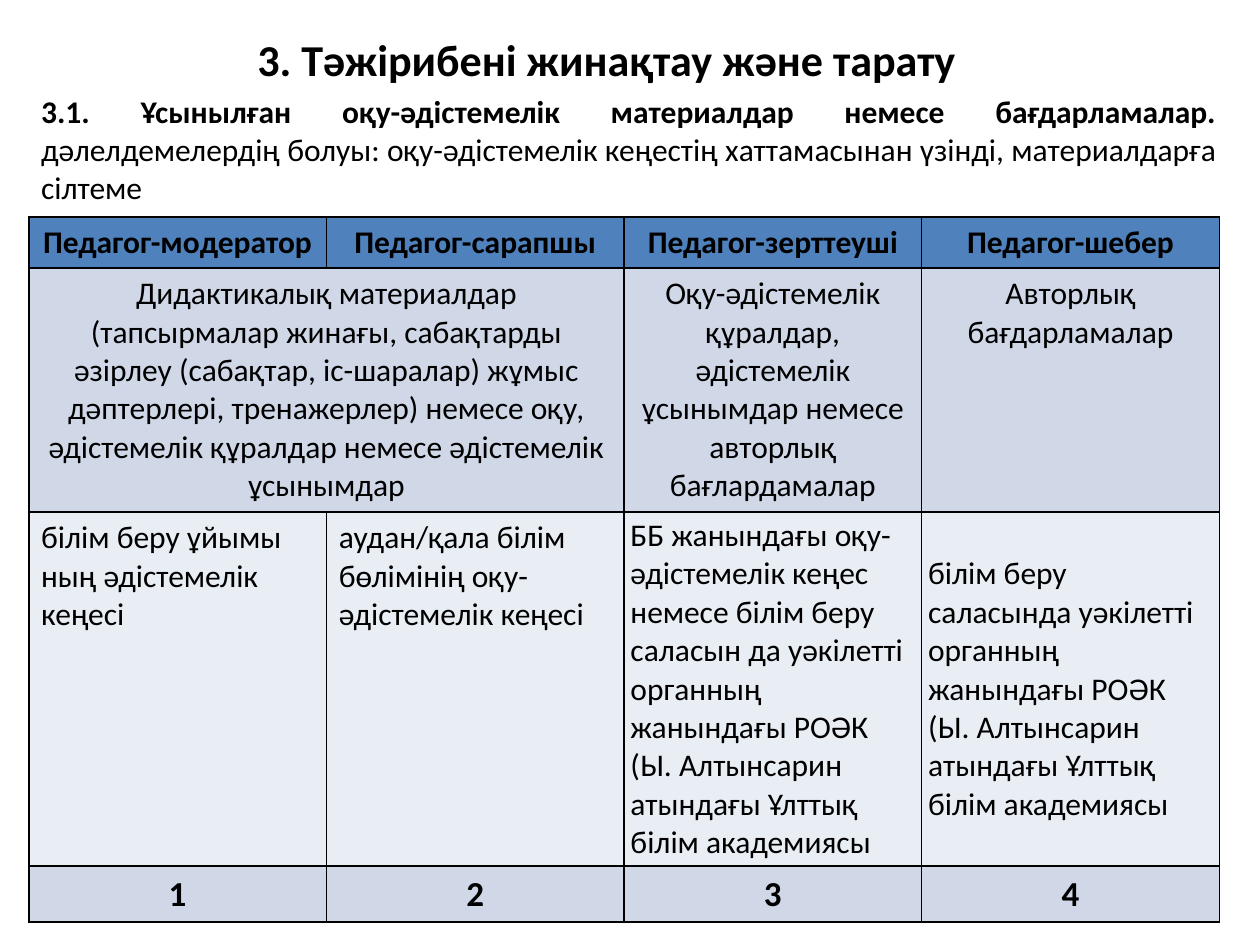
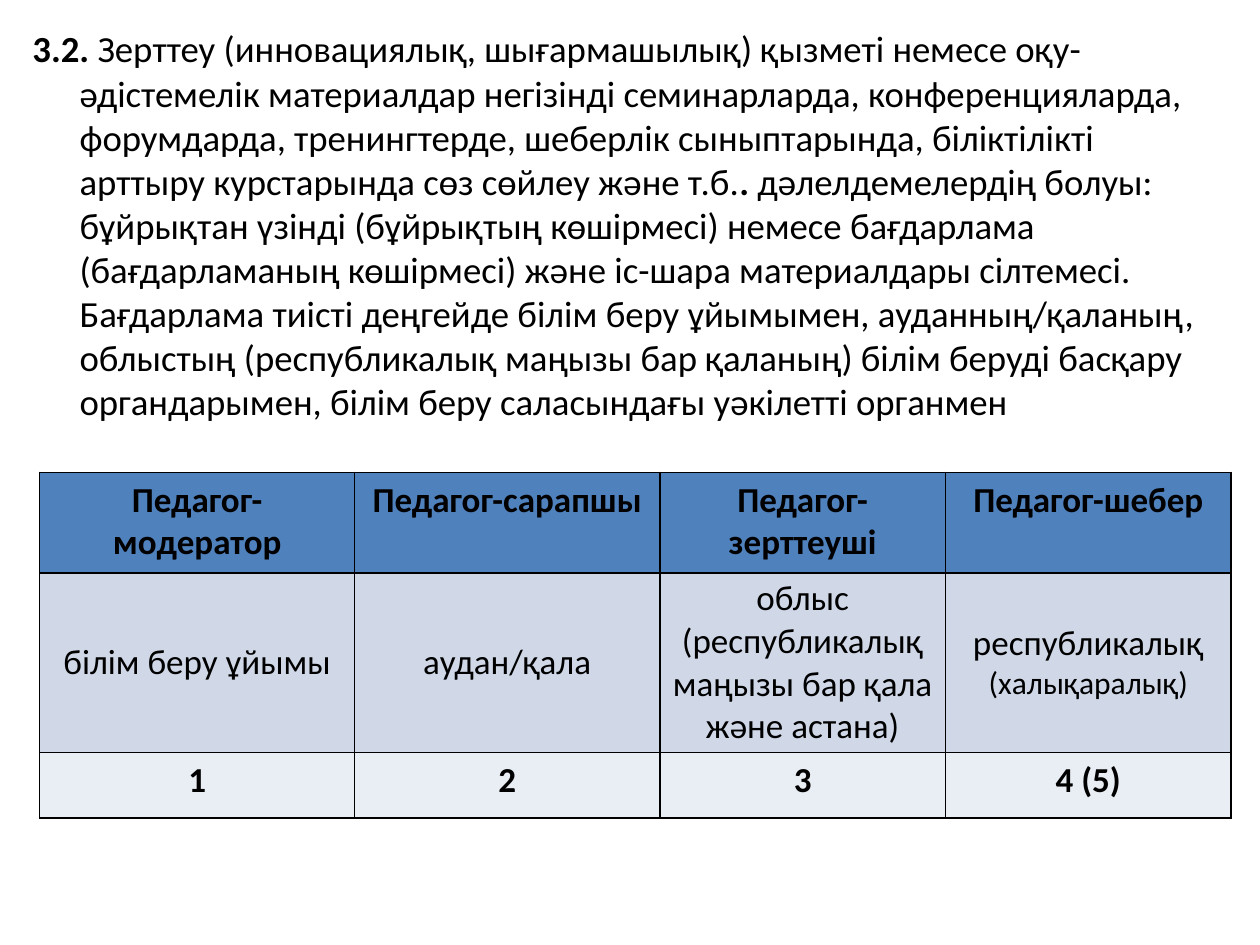
from lxml import etree
from pptx import Presentation
from pptx.dml.color import RGBColor
from pptx.enum.text import MSO_ANCHOR, MSO_AUTO_SIZE, PP_ALIGN
from pptx.oxml.ns import qn
from pptx.util import Cm, Pt

LEFT, MID, JUST = PP_ALIGN.LEFT, PP_ALIGN.CENTER, PP_ALIGN.JUSTIFY
TOP, CENTER = MSO_ANCHOR.TOP, MSO_ANCHOR.MIDDLE
FIXED = MSO_AUTO_SIZE.NONE
FONT = "Calibri"
COLORS = {"ink": "000000", "head": "4F81BD", "dark": "D0D8E8", "light": "E9EDF4"}
WIDE = (0.25, 0.13)
TIGHT = (0.13, 0.08)
ROLES = ["Педагог-модератор", "Педагог-сарапшы", "Педагог-зерттеуші", "Педагог-шебер"]


def color(name):
    return RGBColor.from_string(COLORS[name])


def write(frame, runs, align):
    para = frame.paragraphs[0]
    para.alignment = align
    for text, size, bold in runs:
        run = para.add_run()
        run.text = text
        font = run.font
        font.name, font.size, font.bold = FONT, Pt(size), bold
        font.color.rgb = color("ink")
    return para


def place(shape, box):
    shape.left, shape.top, shape.width, shape.height = map(Cm, box)
    shape.text_frame.word_wrap = True
    shape.text_frame.auto_size = FIXED


def add_title(slide, box, text):
    title = slide.shapes.title
    place(title, box)
    title.text_frame.vertical_anchor = CENTER
    write(title.text_frame, [(text, 25.2, True)], MID)


def add_intro(slide, box, runs):
    intro = slide.shapes.add_textbox(*map(Cm, box))
    place(intro, box)
    intro.text_frame.vertical_anchor = CENTER
    write(intro.text_frame, runs, JUST)


def add_body(slide, box, runs):
    body = slide.placeholders[1]
    place(body, box)
    body.text_frame.vertical_anchor = TOP
    para = write(body.text_frame, runs, LEFT)
    props = para._p.get_or_add_pPr()
    props.set("marL", str(Cm(0.95)))
    props.set("indent", str(-Cm(0.95)))
    etree.SubElement(props, qn("a:buNone"))


def add_edges(cell):
    props = cell._tc.get_or_add_tcPr()
    for side in ("lnL", "lnR", "lnT", "lnB"):
        line = etree.SubElement(props, qn("a:" + side), w=str(Pt(1)))
        fill = etree.SubElement(line, qn("a:solidFill"))
        etree.SubElement(fill, qn("a:srgbClr"), val=COLORS["ink"])


def style_cell(cell, fill, anchor, pad):
    add_edges(cell)
    cell.fill.solid()
    cell.fill.fore_color.rgb = color(fill)
    cell.vertical_anchor = anchor
    cell.margin_left = cell.margin_right = Cm(pad[0])
    cell.margin_top = cell.margin_bottom = Cm(pad[1])


def add_grid(slide, left, top, cols, rows):
    high = sum(row["high"] for row in rows)
    frame = slide.shapes.add_table(
        len(rows), len(cols), Cm(left), Cm(top), Cm(sum(cols)), Cm(high))
    table = frame.table
    for col, width in zip(table.columns, cols):
        col.width = Cm(width)
    fills = ["head"] + ["dark", "light"] * len(rows)
    for y, row in enumerate(rows):
        table.rows[y].height = Cm(row["high"])
        for x, text in enumerate(row["texts"]):
            cell = table.cell(y, x)
            tight = x >= row.get("tight", len(cols))
            style_cell(cell, fills[y], CENTER if tight else TOP, TIGHT if tight else WIDE)
            if text is None:
                table.cell(y, x - 1).merge(cell)
                continue
            runs = [(text, row["size"], row.get("bold", False))]
            if isinstance(text, list):
                runs = text
            write(cell.text_frame, runs, row.get("align", MID))


def build_works(deck):
    slide = deck.slides.add_slide(deck.slide_layouts[5])
    add_title(slide, (0.8, 0.58, 22.86, 1.22), "3. Тәжірибені жинақтау және тарату")
    add_intro(slide, (0.58, 2.39, 24.2, 1.22), [
        ("3.1. Ұсынылған оқу-әдістемелік материалдар немесе бағдарламалар. ", 18, True),
        ("дәлелдемелердің болуы: оқу-әдістемелік кеңестің хаттамасынан үзінді, "
         "материалдарға сілтеме", 18, False),
    ])
    add_grid(slide, 0.58, 4.37, [6] * 4, [
        {"high": 1.03, "size": 18, "bold": True, "texts": ROLES},
        {"high": 4.92, "size": 18, "texts": [
            "Дидактикалық материалдар (тапсырмалар жинағы, сабақтарды әзірлеу "
            "(сабақтар, іс-шаралар) жұмыс дәптерлері, тренажерлер) немесе оқу, "
            "әдістемелік құралдар немесе әдістемелік ұсынымдар",
            None,
            "Оқу-әдістемелік құралдар, әдістемелік ұсынымдар немесе авторлық бағлардамалар",
            "Авторлық бағдарламалар"]},
        {"high": 7.13, "size": 18, "align": LEFT, "tight": 2, "texts": [
            "білім беру ұйымы ның әдістемелік кеңесі",
            "аудан/қала білім бөлімінің оқу-әдістемелік кеңесі",
            "ББ жанындағы оқу-әдістемелік кеңес немесе білім беру саласын да уәкілетті "
            "органның жанындағы РОӘК (Ы. Алтынсарин атындағы Ұлттық білім академиясы",
            "білім беру саласында уәкілетті органның жанындағы РОӘК "
            "(Ы. Алтынсарин атындағы Ұлттық білім академиясы"]},
        {"high": 1.12, "size": 20, "bold": True, "texts": ["1", "2", "3", "4"]},
    ])


def build_talks(deck):
    slide = deck.slides.add_slide(deck.slide_layouts[1])
    title = slide.shapes.title._element
    title.getparent().remove(title)
    add_body(slide, (0.4, 0.4, 24.6, 18.05), [
        ("3.2. ", 21, True),
        ("Зерттеу (инновациялық, шығармашылық) қызметі немесе оқу-әдістемелік "
         "материалдар негізінді семинарларда, конференцияларда, форумдарда, "
         "тренингтерде, шеберлік сыныптарында, біліктілікті арттыру курстарында "
         "сөз сөйлеу және т.б.", 21, False),
        (". ", 21, True),
        ("дәлелдемелердің болуы: бұйрықтан үзінді (бұйрықтың көшірмесі) немесе "
         "бағдарлама (бағдарламаның көшірмесі) және іс-шара материалдары сілтемесі. "
         "Бағдарлама тиісті деңгейде білім беру ұйымымен, ауданның/қаланың, "
         "облыстың (республикалық маңызы бар қаланың) білім беруді басқару "
         "органдарымен, білім беру саласындағы уәкілетті органмен", 21, False),
    ])
    add_grid(slide, 0.8, 9.52, [6.35, 6.15, 5.76, 5.76], [
        {"high": 2.03, "size": 20, "bold": True, "texts": ROLES},
        {"high": 3.61, "size": 20, "tight": 0, "texts": [
            "білім беру ұйымы", "аудан/қала",
            "облыс (республикалық маңызы бар қала және астана)",
            [("республикалық", 20, False), (" (халықаралық)", 18, False)]]},
        {"high": 1.32, "size": 20, "bold": True, "texts": ["1", "2", "3", "4 (5)"]},
    ])


def main():
    deck = Presentation()
    deck.slide_width, deck.slide_height = Cm(25.4), Cm(19.05)
    build_works(deck)
    build_talks(deck)
    deck.save("out.pptx")


if __name__ == "__main__":
    main()
